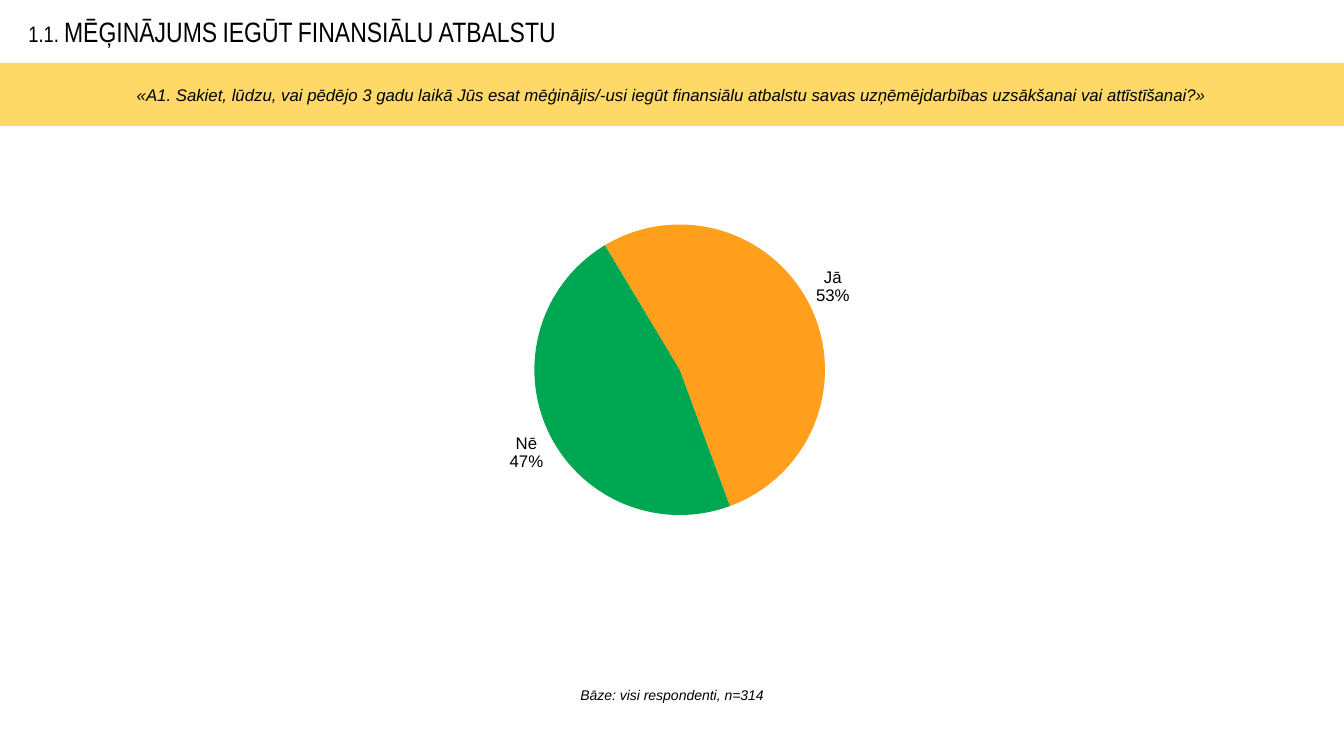
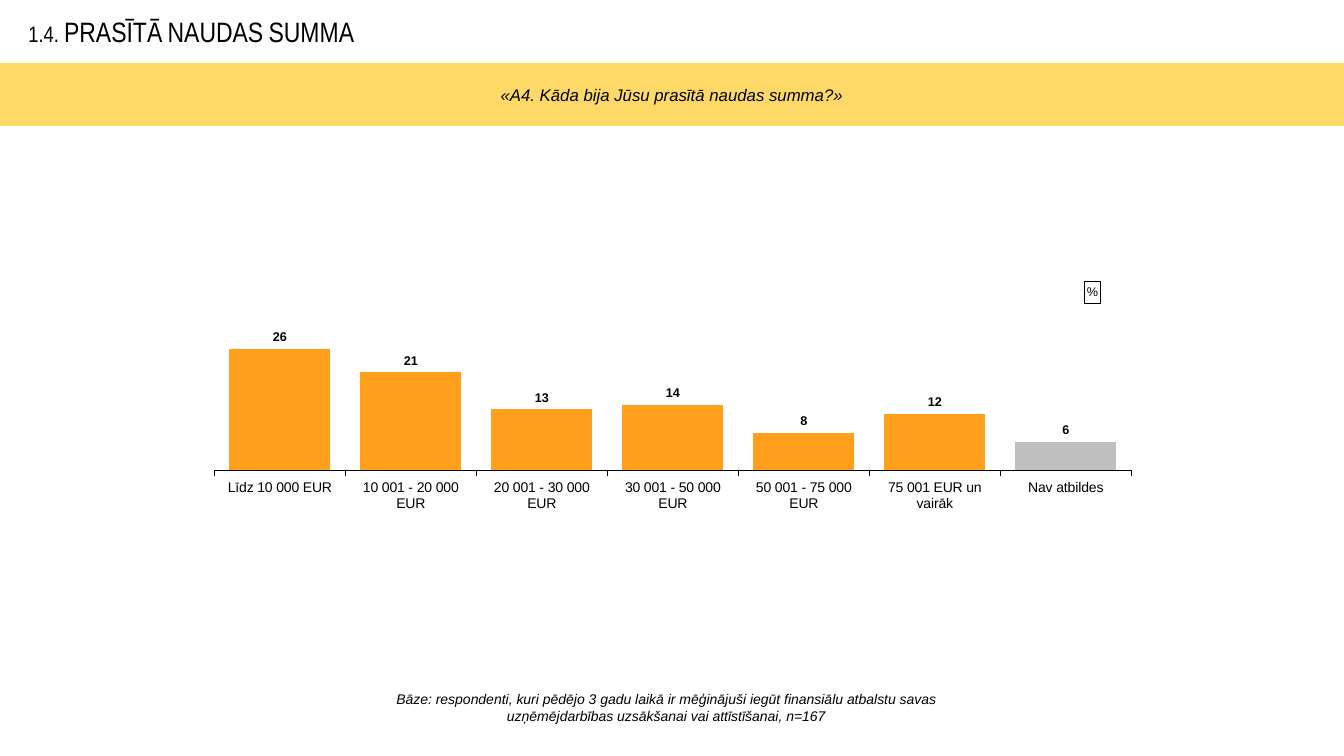
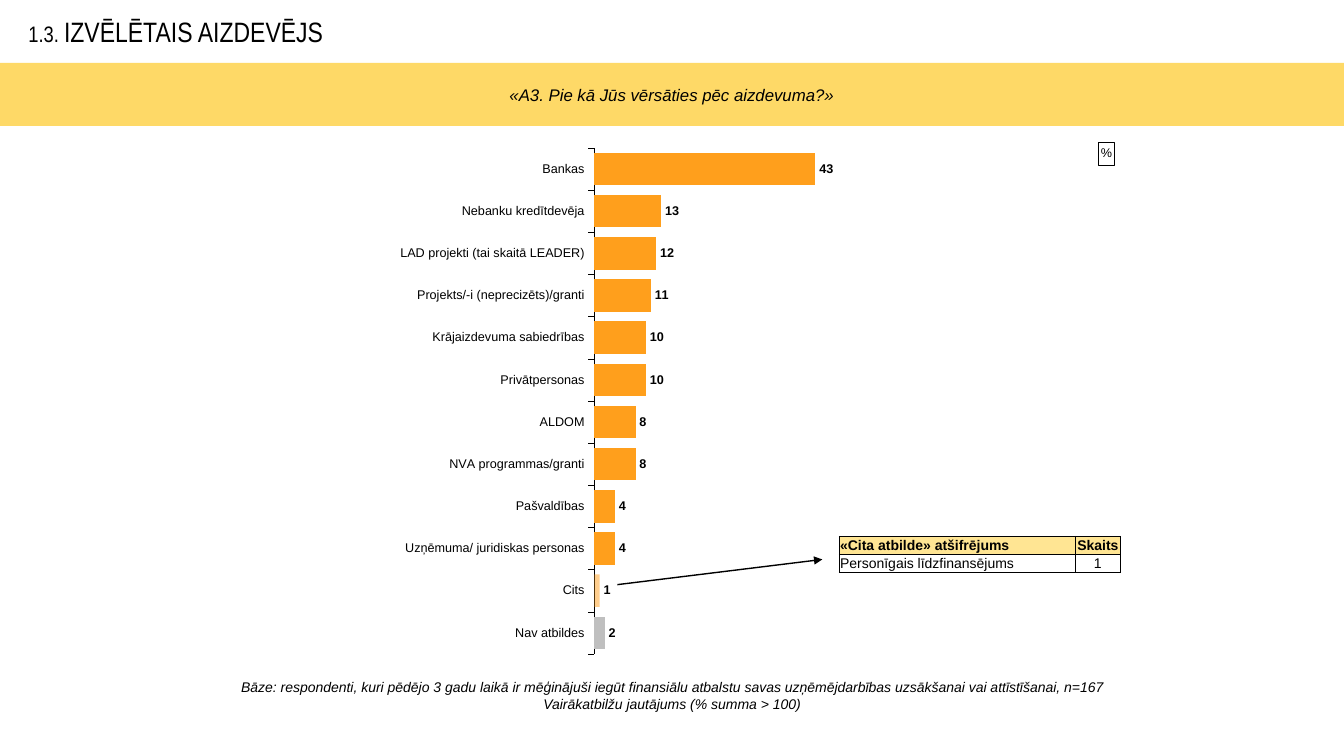
from dataclasses import dataclass, field
from typing import NamedTuple

from lxml import etree
from pptx import Presentation
from pptx import util as u
from pptx.chart.data import CategoryChartData
from pptx.dml.color import RGBColor
from pptx.enum import chart as charts, shapes, text
from pptx.oxml.ns import qn

WIDE, HIGH = 13.33, 7.5
COLS, ROWS = 16, 12
KINDS = charts.XL_CHART_TYPE


@dataclass(frozen=True)
class Theme:
    ink: str = "000000"
    paper: str = "FFFFFF"
    band: str = "FED967"
    head: str = "FFE593"
    main: str = "FF9F1C"
    green: str = "00A752"
    grey: str = "BFBFBF"
    font: str = "Arial"
    narrow: str = "Arial Narrow"
    title: int = 20
    ask: int = 12
    note: int = 10
    small: int = 9
    hair: float = 0.25


LOOK = Theme()


class Box(NamedTuple):
    """Left, top, width and height in grid columns and rows."""
    x: float
    y: float
    w: float
    h: float


class Tint(NamedTuple):
    color: str
    alpha: int = 100


TITLE = Box(0.22, 0, 12, 1)
BAND = Box(0, 1, COLS, 1)
BASE = Box(2, 10.66, 12, 0.75)


@dataclass(frozen=True)
class Graph:
    kind: KINDS
    box: Box
    plot: tuple
    data: dict
    tints: dict
    size: int = LOOK.small
    top: int = 100


@dataclass(frozen=True)
class Page:
    title: str
    ask: str
    base: list
    graph: Graph
    foot: Box = BASE
    rows: list = field(default_factory=list)


PAGES = [
    Page(
        "1.1. MĒĢINĀJUMS IEGŪT FINANSIĀLU ATBALSTU",
        "«A1. Sakiet, lūdzu, vai pēdējo 3 gadu laikā Jūs esat mēģinājis/-usi iegūt "
        "finansiālu atbalstu savas uzņēmējdarbības uzsākšanai vai attīstīšanai?»",
        ["Bāze: visi respondenti, n=314"],
        Graph(KINDS.PIE, Box(3.37, 2.98, 9.26, 5.84), (0.26, 0.1, 0.5, 0.79),
              {"Jā": 53, "Nē": 47},
              {0: Tint(LOOK.main), 1: Tint(LOOK.green)}),
    ),
    Page(
        "1.4. PRASĪTĀ NAUDAS SUMMA",
        "«A4. Kāda bija Jūsu prasītā naudas summa?»",
        ["Bāze: respondenti, kuri pēdējo 3 gadu laikā ir mēģinājuši iegūt "
         "finansiālu atbalstu savas",
         "uzņēmējdarbības uzsākšanai vai attīstīšanai, n=167"],
        Graph(KINDS.COLUMN_CLUSTERED, Box(2.44, 4.42, 11.14, 4.11),
              (0.01, 0.02, 0.98, 0.72),
              {"Līdz 10 000 EUR": 26, "10 001 - 20 000 EUR": 21,
               "20 001 - 30 000 EUR": 13, "30 001 - 50 000 EUR": 14,
               "50 001 - 75 000 EUR": 8, "75 001 EUR un vairāk": 12,
               "Nav atbildes": 6},
              {6: Tint(LOOK.grey)}, size=LOOK.note, top=40),
        foot=Box(2, 10.85, 11.86, 0.75),
    ),
    Page(
        "1.3. IZVĒLĒTAIS AIZDEVĒJS",
        "«A3. Pie kā Jūs vērsāties pēc aizdevuma?»",
        ["Bāze: respondenti, kuri pēdējo 3 gadu laikā ir mēģinājuši iegūt "
         "finansiālu atbalstu savas uzņēmējdarbības uzsākšanai vai "
         "attīstīšanai, n=167",
         "Vairākatbilžu jautājums (% summa > 100)"],
        Graph(KINDS.BAR_CLUSTERED, Box(2.23, 2.18, 11.54, 8.37),
              (0.42, 0.02, 0.53, 0.96),
              {"Bankas": 43, "Nebanku kredītdevēja": 13,
               "LAD projekti (tai skaitā LEADER)": 12,
               "Projekts/-i (neprecizēts)/granti": 11,
               "Krājaizdevuma sabiedrības": 10, "Privātpersonas": 10,
               "ALDOM": 8, "NVA programmas/granti": 8, "Pašvaldības": 4,
               "Uzņēmuma/ juridiskas personas": 4, "Cits": 1,
               "Nav atbildes": 2},
              {10: Tint(LOOK.main, 50), 11: Tint(LOOK.grey)}),
        rows=[("«Cita atbilde» atšifrējums", "Skaits"),
              ("Personīgais līdzfinansējums", "1")],
    ),
]


def col(n: float) -> int:
    return u.Inches(n * WIDE / COLS)


def row(n: float) -> int:
    return u.Inches(n * HIGH / ROWS)


def place(box: Box) -> tuple:
    return col(box.x), row(box.y), col(box.w), row(box.h)


def rgb(color: str) -> RGBColor:
    return RGBColor.from_string(color)


def style(font, size: float, name: str = LOOK.font, bold: bool = False,
          slant: bool = False) -> None:
    font.size, font.name = u.Pt(size), name
    font.bold, font.italic = bold, slant
    font.color.rgb = rgb(LOOK.ink)


def paint(form, color: str) -> None:
    form.fill.solid()
    form.fill.fore_color.rgb = rgb(color)


def stroke(line, width: float) -> None:
    line.color.rgb = rgb(LOOK.ink)
    line.width = u.Pt(width)


def write(shape, lines: list, size: int, name: str = LOOK.font,
          slant: bool = True, mid: bool = True, caps: bool = False) -> None:
    frame = shape.text_frame
    frame.word_wrap = True
    frame.vertical_anchor = text.MSO_ANCHOR.MIDDLE
    frame.text = "\n".join(lines)
    for para in frame.paragraphs:
        para.alignment = text.PP_ALIGN.CENTER if mid else text.PP_ALIGN.LEFT
        for run in para.runs:
            style(run.font, size, name, slant=slant)
            if caps:
                run.font._element.set("cap", "small")


def pin(node, spot: int, inner: bool = False, **share: float) -> None:
    """Give a chart part a fixed place, in shares of the chart."""
    for old in node.findall(qn("c:layout")):
        node.remove(old)
    layout = etree.Element(qn("c:layout"))
    manual = etree.SubElement(layout, qn("c:manualLayout"))
    marks = {"layoutTarget": "inner"} if inner else {}
    marks |= {"xMode": "edge", "yMode": "edge"} | share
    for tag, val in marks.items():
        etree.SubElement(manual, qn(f"c:{tag}"), val=str(val))
    node.insert(spot, layout)


def tint(chart, tints: dict) -> None:
    series = chart.plots[0].series[0]
    for spot, shade in tints.items():
        paint(series.points[spot].format, shade.color)
        if shade.alpha < 100:
            fill = chart.element.findall(f".//{qn('c:dPt')}//{qn('a:srgbClr')}")[-1]
            etree.SubElement(fill, qn("a:alpha"), val=str(shade.alpha * 1000))


def slice_up(chart, tags) -> None:
    """Turn the pie and put each share under its name."""
    tags.show_percentage = tags.show_category_name = True
    tags.show_value = False
    pie = chart.element.find(f".//{qn('c:pieChart')}")
    etree.SubElement(pie, qn("c:firstSliceAng"), val="329")
    gap = etree.Element(qn("c:separator"))
    gap.text = "\n"
    pie.find(f".//{qn('c:showBubbleSize')}").addnext(gap)


def set_bars(chart, graph: Graph) -> None:
    plot = chart.plots[0]
    plot.gap_width = 30
    plot.series[0].invert_if_negative = False
    paint(plot.series[0].format, LOOK.main)
    vals, cats = chart.value_axis, chart.category_axis
    vals.visible = vals.has_major_gridlines = False
    vals.minimum_scale, vals.maximum_scale = 0, graph.top
    cats.reverse_order = graph.kind == KINDS.BAR_CLUSTERED
    cats.major_tick_mark = charts.XL_TICK_MARK.OUTSIDE
    stroke(cats.format.line, LOOK.hair)
    style(cats.tick_labels.font, graph.size)
    unit = chart.chart_title
    unit.text_frame.text = "%"
    style(unit.text_frame.paragraphs[0].runs[0].font, LOOK.small)
    paint(unit.format, LOOK.paper)
    stroke(unit.format.line, LOOK.hair)
    pin(unit.element, 1, x=0.94, y=0.01)


def plot_out(slide, graph: Graph) -> None:
    data = CategoryChartData(number_format="0")
    data.categories = list(graph.data)
    data.add_series("Series 1", list(graph.data.values()))
    chart = slide.shapes.add_chart(graph.kind, *place(graph.box), data).chart
    round_one = graph.kind == KINDS.PIE
    style(chart.font, LOOK.small)
    chart.has_legend = False
    chart.has_title = not round_one
    plot = chart.plots[0]
    plot.vary_by_categories = round_one
    tags = plot.series[0].data_labels
    tags.show_value = True
    tags.position = charts.XL_LABEL_POSITION.OUTSIDE_END
    tags.number_format = "0%" if round_one else "0"
    tags.number_format_is_linked = False
    style(tags.font, LOOK.ask if round_one else LOOK.small, bold=not round_one)
    if round_one:
        slice_up(chart, tags)
    else:
        set_bars(chart, graph)
    tint(chart, graph.tints)
    area = chart.element.find(f".//{qn('c:plotArea')}")
    pin(area, 0, inner=True, **dict(zip("xywh", graph.plot)))


def edge(cell) -> None:
    """Draw a thin line on all four sides of a cell."""
    props = cell._tc.get_or_add_tcPr()
    for spot, side in enumerate("LRTB"):
        line = etree.Element(qn(f"a:ln{side}"), w=str(u.Pt(LOOK.hair)))
        fill = etree.SubElement(line, qn("a:solidFill"))
        etree.SubElement(fill, qn("a:srgbClr"), val=LOOK.ink)
        props.insert(spot, line)


def grid(slide, rows: list) -> None:
    wide, high = (2.81, 0.54), 0.27
    box = Box(9.99, 8.51, sum(wide), high * len(rows))
    table = slide.shapes.add_table(len(rows), len(wide), *place(box)).table
    for j, span in enumerate(wide):
        table.columns[j].width = col(span)
    for i, words in enumerate(rows):
        table.rows[i].height = row(high)
        for j, word in enumerate(words):
            cell = table.cell(i, j)
            cell.text = word
            cell.vertical_anchor = text.MSO_ANCHOR.MIDDLE
            cell.margin_left = cell.margin_right = cell.margin_top = u.Inches(0.01)
            cell.margin_bottom = 0
            para = cell.text_frame.paragraphs[0]
            para.alignment = text.PP_ALIGN.CENTER if j else text.PP_ALIGN.LEFT
            style(para.runs[0].font, LOOK.note, bold=i == 0)
            paint(cell, LOOK.paper if i else LOOK.head)
            edge(cell)


def arrow(slide) -> None:
    link = slide.shapes.add_connector(
        shapes.MSO_CONNECTOR.STRAIGHT, col(7.35), row(9.28), col(9.79), row(8.88))
    stroke(link.line, 1)
    etree.SubElement(link.line._get_or_add_ln(), qn("a:tailEnd"), type="triangle")
    etree.SubElement(link._element.spPr, qn("a:effectLst"))


def build(deck, page: Page) -> None:
    slide = deck.slides.add_slide(deck.slide_layouts[6])
    title = slide.shapes.add_textbox(*place(TITLE))
    write(title, [page.title], LOOK.title, LOOK.narrow,
          slant=False, mid=False, caps=True)
    band = slide.shapes.add_shape(shapes.MSO_SHAPE.RECTANGLE, *place(BAND))
    band.shadow.inherit = False
    paint(band, LOOK.band)
    band.line.fill.background()
    write(band, [page.ask], LOOK.ask)
    plot_out(slide, page.graph)
    write(slide.shapes.add_textbox(*place(page.foot)), page.base, LOOK.note)
    if page.rows:
        grid(slide, page.rows)
        arrow(slide)


def main() -> None:
    deck = Presentation()
    deck.slide_width, deck.slide_height = u.Inches(WIDE), u.Inches(HIGH)
    for page in PAGES:
        build(deck, page)
    deck.save("out.pptx")


if __name__ == "__main__":
    main()
